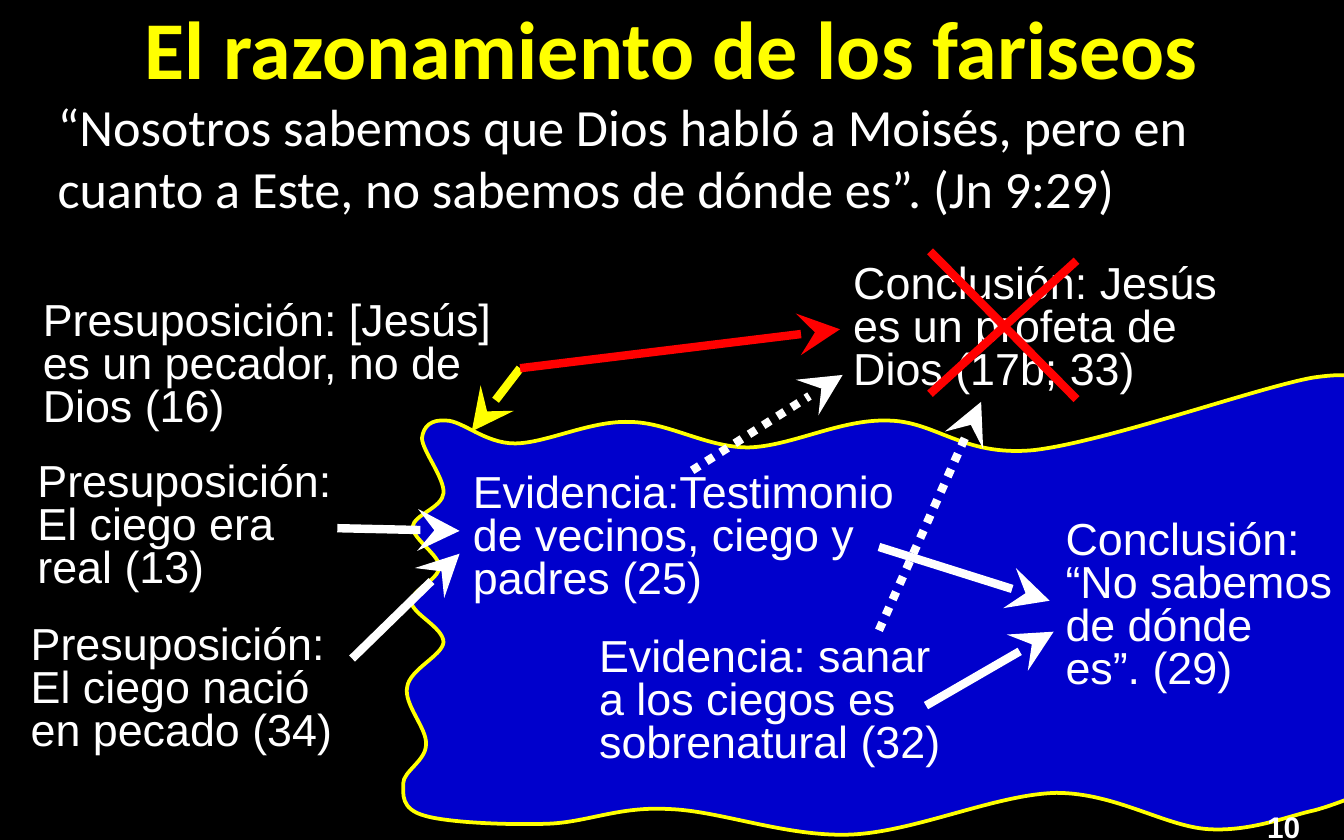
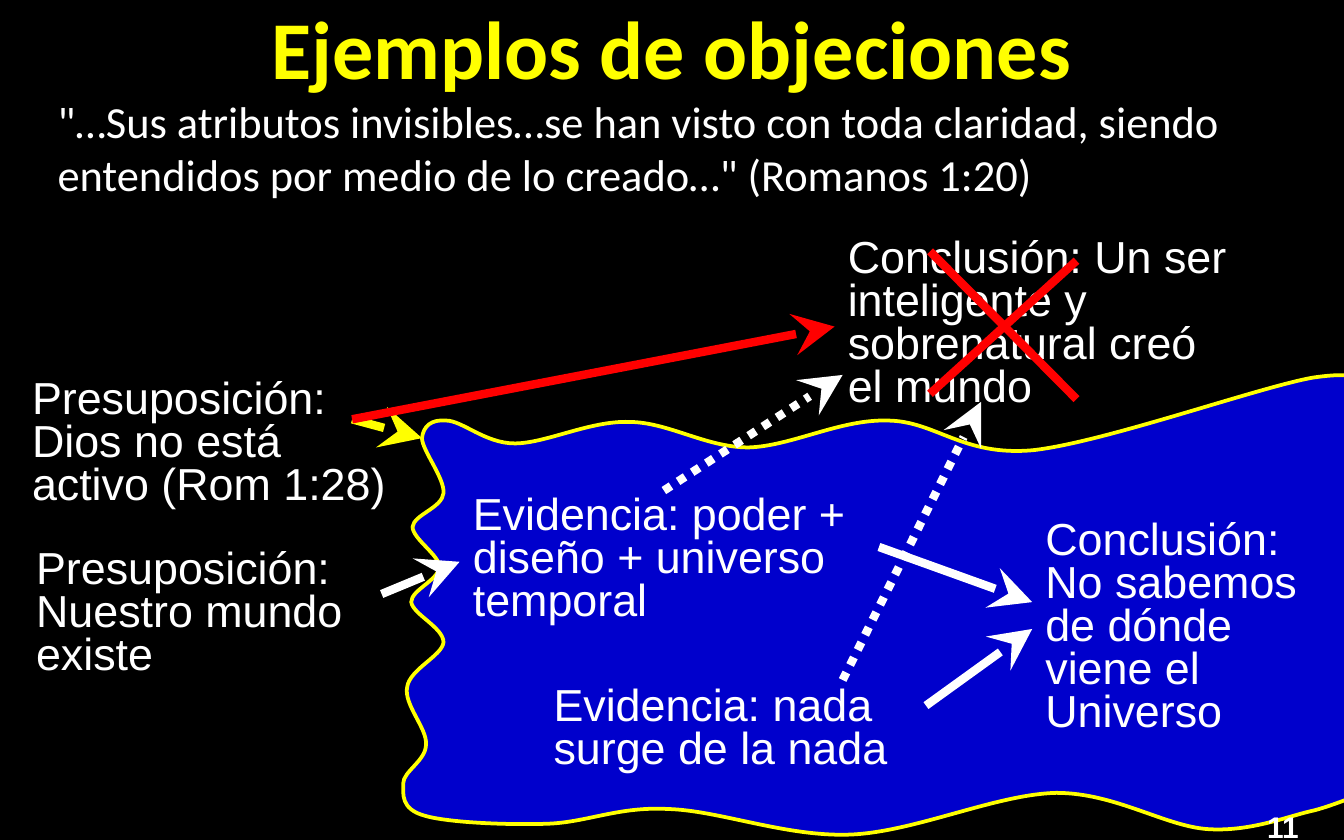
from dataclasses import dataclass

from lxml import etree
from pptx import Presentation
from pptx.dml.color import RGBColor
from pptx.enum.dml import MSO_LINE
from pptx.enum.shapes import MSO_CONNECTOR, MSO_SHAPE
from pptx.enum.text import MSO_ANCHOR, MSO_AUTO_SIZE, PP_ALIGN
from pptx.oxml.ns import qn
from pptx.slide import Slide
from pptx.util import Emu, Pt

# Enum members
RECTANGLE = MSO_SHAPE.RECTANGLE
STRAIGHT = MSO_CONNECTOR.STRAIGHT
DOTTED = MSO_LINE.ROUND_DOT
TOP, MIDDLE = MSO_ANCHOR.TOP, MSO_ANCHOR.MIDDLE
FIXED, GROW = MSO_AUTO_SIZE.NONE, MSO_AUTO_SIZE.SHAPE_TO_FIT_TEXT
LEFT, CENTER = PP_ALIGN.LEFT, PP_ALIGN.CENTER

# Scale and colours: 100 px to the inch
PX = 9144
WIDTH, HEIGHT = 1000, 625
BLACK, WHITE, YELLOW, RED, BLUE = "000000", "FFFFFF", "FFFF00", "FF0000", "0000CC"

Point = tuple[int, int]
Box = tuple[int, int, int, int]


@dataclass(frozen=True)
class TextStyle:
    font: dict
    paragraph: dict
    frame: dict
    color: str = WHITE


@dataclass(frozen=True)
class Note:
    text: str
    box: Box


@dataclass(frozen=True)
class Stroke:
    start: Point
    end: Point
    color: str = WHITE
    dotted: bool = False
    arrow: bool = True


@dataclass(frozen=True)
class Argument:
    title: str
    verse: Note
    verse_size: float
    number: str
    notes: list[Note]
    strokes: list[Stroke]


# Text styles
TITLE = TextStyle({"name": "Calibri", "size": Pt(44), "bold": True},
                  {"alignment": CENTER},
                  {"vertical_anchor": MIDDLE, "auto_size": FIXED}, YELLOW)
NUMBER = TextStyle({"name": "Arial", "size": Pt(16), "bold": True},
                   {"alignment": LEFT},
                   {"vertical_anchor": TOP, "auto_size": FIXED})
NOTE = TextStyle({"name": "Arial", "size": Pt(24)},
                 {"alignment": LEFT, "line_spacing": 0.8},
                 {"vertical_anchor": TOP, "auto_size": GROW})

TITLE_BOX: Box = (75, 7, 850, 56)
NUMBER_BOX: Box = (933, 597, 50, 28)

# Outline of the evidence area: a start, then two controls and an end per curve
AREA_START: Point = (1011, 295)
AREA_CURVES = [
    (1014, 285, 1018, 275, 977, 281), (937, 288, 822, 329, 769, 335),
    (716, 340, 696, 313, 660, 313), (625, 312, 589, 332, 557, 333),
    (525, 333, 497, 314, 468, 314), (439, 313, 406, 330, 383, 330),
    (361, 330, 344, 313, 332, 313), (321, 312, 315, 317, 314, 326),
    (314, 335, 331, 356, 330, 367), (329, 378, 308, 383, 307, 392),
    (307, 401, 327, 413, 327, 422), (326, 432, 306, 439, 306, 448),
    (307, 457, 330, 467, 330, 478), (329, 488, 305, 498, 303, 511),
    (300, 524, 318, 542, 317, 554), (317, 566, 300, 574, 300, 583),
    (300, 591, 298, 602, 316, 607), (333, 612, 376, 614, 407, 613),
    (437, 612, 460, 600, 497, 602), (535, 603, 585, 623, 633, 621),
    (681, 619, 741, 591, 786, 590), (830, 590, 867, 615, 899, 617),
    (931, 619, 959, 607, 978, 603), (997, 598, 1026, 585, 1032, 583),
    (1040, 579, 1012, 296, 1011, 295),
]

# Strokes that both arguments share
REJECTION = [
    Stroke((692, 187), (801, 297), RED, arrow=False),
    Stroke((692, 293), (801, 194), RED, arrow=False),
]
DENIED_LEFT: Point = (627, 279)
DENIED_BELOW: Point = (730, 299)
UPPER_EVIDENCE: Point = (654, 407)
LOWER_EVIDENCE: Point = (689, 525)

ARGUMENTS = [
    Argument(
        "El razonamiento de los fariseos",
        Note("“Nosotros sabemos que Dios habló a Moisés, pero en cuanto a Este, "
             "no sabemos de dónde es”. (Jn 9:29)", (33, 65, 917, 106)),
        28, "10",
        [
            Note("Presuposición: El ciego nació en pecado (34)", (13, 461, 258, 107)),
            Note("Evidencia: sanar a los ciegos es sobrenatural (32)", (436, 470, 290, 107)),
            Note("Presuposición: [Jesús] es un pecador, no de Dios (16)", (22, 220, 364, 107)),
            Note("Conclusión: Jesús es un profeta de Dios (17b; 33)", (625, 192, 291, 107)),
            Note("Conclusión: “No sabemos de dónde es”. (29)", (783, 383, 220, 139)),
            Note("Presuposición: El ciego era real (13)", (18, 340, 258, 107)),
            Note("Evidencia:Testimonio de vecinos, ciego y padres (25)", (342, 348, 342, 107)),
        ],
        [
            Stroke((262, 490), (342, 412)),
            Stroke((251, 393), (342, 395)),
            Stroke((387, 274), (351, 321), YELLOW),
            Stroke((515, 350), DENIED_LEFT, dotted=True),
            Stroke((654, 469), DENIED_BELOW, dotted=True),
            Stroke((387, 274), (625, 245), RED),
            Stroke(UPPER_EVIDENCE, (781, 447)),
            Stroke(LOWER_EVIDENCE, (784, 470)),
        ],
    ),
    Argument(
        "Ejemplos de objeciones",
        Note('"…Sus atributos invisibles…se han visto con toda claridad, siendo '
             'entendidos por medio de lo creado…" (Romanos 1:20)', (33, 65, 900, 106)),
        23.8, "11",
        [
            Note("Presuposición: Nuestro mundo existe", (17, 404, 268, 75)),
            Note("Conclusión: Un ser inteligente y sobrenatural creó el mundo",
                 (621, 173, 304, 139)),
            Note("Evidencia: poder + diseño + universo temporal", (342, 364, 331, 107)),
            Note("Evidencia: nada surge de la nada", (402, 506, 319, 75)),
            Note("Presuposición: Dios no está activo (Rom 1:28)", (14, 278, 286, 107)),
            Note("Conclusión: No sabemos de dónde viene el Universo", (768, 383, 216, 172)),
        ],
        [
            Stroke((284, 442), (342, 418)),
            Stroke((494, 365), DENIED_LEFT, dotted=True),
            Stroke((262, 312), (314, 326), YELLOW),
            Stroke((627, 506), DENIED_BELOW, dotted=True),
            Stroke((262, 312), (621, 243), RED),
            Stroke(UPPER_EVIDENCE, (768, 448)),
            Stroke(LOWER_EVIDENCE, (768, 468)),
        ],
    ),
]


def rgb(code: str) -> RGBColor:
    return RGBColor.from_string(code)


def px(*lengths: int) -> list[Emu]:
    return [Emu(length * PX) for length in lengths]


def apply(target: object, formats: dict) -> None:
    for attribute, value in formats.items():
        setattr(target, attribute, value)


def add_text(slide: Slide, text: str, box: Box, style: TextStyle) -> None:
    frame = slide.shapes.add_textbox(*px(*box)).text_frame
    frame.word_wrap = True
    apply(frame, style.frame)
    paragraph = frame.paragraphs[0]
    apply(paragraph, style.paragraph)
    run = paragraph.add_run()
    run.text = text
    apply(run.font, style.font)
    run.font.color.rgb = rgb(style.color)


def add_stroke(slide: Slide, stroke: Stroke) -> None:
    connector = slide.shapes.add_connector(STRAIGHT, *px(*stroke.start, *stroke.end))
    line = connector.line
    line.width = Pt(4.5)
    line.color.rgb = rgb(stroke.color)
    if stroke.dotted:
        line.dash_style = DOTTED
    properties = connector.element.spPr
    if stroke.arrow:
        etree.SubElement(properties.find(qn("a:ln")), qn("a:tailEnd"),
                         type="stealth", w="lg", len="lg")
    etree.SubElement(properties, qn("a:effectLst"))


def add_backdrop(slide: Slide) -> None:
    backdrop = slide.shapes.add_shape(RECTANGLE, *px(0, 0, WIDTH, HEIGHT))
    backdrop.shadow.inherit = False
    backdrop.fill.solid()
    backdrop.fill.fore_color.rgb = rgb(BLACK)
    backdrop.line.fill.background()


def add_evidence_area(slide: Slide) -> None:
    builder = slide.shapes.build_freeform(*px(*AREA_START))
    builder.add_line_segments([px(*curve[4:]) for curve in AREA_CURVES], close=True)
    area = builder.convert_to_shape()
    area.shadow.inherit = False
    area.fill.solid()
    area.fill.fore_color.rgb = rgb(BLUE)
    area.line.color.rgb = rgb(YELLOW)
    area.line.width = Pt(2)

    # Bend each straight segment into its cubic curve
    segments = list(area.element.iter(qn("a:lnTo")))
    for segment, curve in zip(segments, AREA_CURVES):
        bend = etree.Element(qn("a:cubicBezTo"))
        for x, y in zip(px(*curve[::2]), px(*curve[1::2])):
            etree.SubElement(bend, qn("a:pt"), x=str(x - area.left), y=str(y - area.top))
        segment.getparent().replace(segment, bend)


def add_argument(slide: Slide, argument: Argument) -> None:
    add_backdrop(slide)
    add_evidence_area(slide)

    # Heading, verse and slide number
    add_text(slide, argument.title, TITLE_BOX, TITLE)
    verse_style = TextStyle({"name": "Calibri", "size": Pt(argument.verse_size)},
                            {"alignment": LEFT}, NUMBER.frame)
    add_text(slide, argument.verse.text, argument.verse.box, verse_style)
    add_text(slide, argument.number, NUMBER_BOX, NUMBER)

    # Reasoning map
    for note in argument.notes:
        add_text(slide, note.text, note.box, NOTE)
    for stroke in argument.strokes + REJECTION:
        add_stroke(slide, stroke)


def main() -> None:
    prs = Presentation()
    prs.slide_width, prs.slide_height = px(WIDTH, HEIGHT)
    blank = prs.slide_layouts[6]
    for argument in ARGUMENTS:
        add_argument(prs.slides.add_slide(blank), argument)
    prs.save("out.pptx")


if __name__ == "__main__":
    main()
